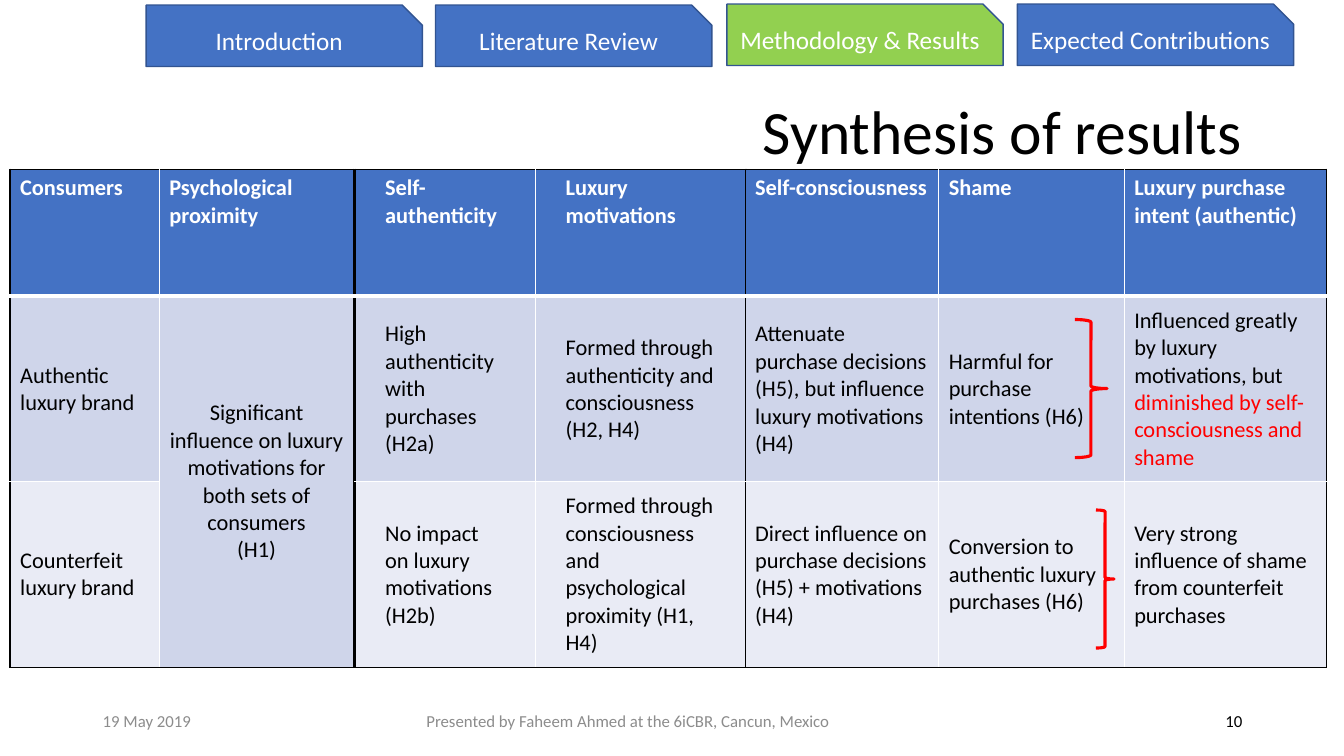
from lxml import etree
from pptx import Presentation
from pptx import util as u
from pptx.dml.color import RGBColor
from pptx.enum import shapes, text
from pptx.oxml.ns import qn

BLUE, BLACK, WHITE, RED = "4472C4", "000000", "FFFFFF", "FF0000"
ROW_FILLS = [BLUE, "CFD5EA", "E9EBF5"]
ROW_HEIGHTS = [1.26, 1.84, 1.84]
ALIGN = text.PP_ALIGN

STEPS = [
    ("Introduction", 1.45, 0.05, BLUE),
    ("Literature Review", 4.32, 0.05, BLUE),
    ("Methodology & Results", 7.21, 0.04, "92D050"),
    ("Expected Contributions", 10.09, 0.04, BLUE),
]

PROXIMITY = [
    ["Consumers", "Psychological proximity"],
    ["Authentic luxury brand",
     "Significant influence on luxury motivations for both sets of consumers\n(H1)"],
    ["Counterfeit luxury brand", ""],
]
MOTIVATION = [
    ["Self-authenticity", "Luxury motivations"],
    ["High authenticity with purchases (H2a)",
     "Formed through authenticity and consciousness (H2, H4)"],
    ["No impact on luxury motivations (H2b)",
     "Formed through consciousness and psychological proximity (H1, H4)"],
]
OUTCOME = [
    ["Self-consciousness", "Shame", "Luxury purchase intent (authentic)"],
    ["Attenuate purchase decisions (H5), but influence luxury motivations (H4)",
     "Harmful for\vpurchase intentions (H6)",
     ("Influenced greatly by luxury motivations, but ",
      "diminished by self-consciousness and shame")],
    ["Direct influence on purchase decisions (H5) + motivations (H4)",
     "Conversion to authentic luxury purchases (H6)",
     "Very strong influence of shame from counterfeit purchases"],
]


def rgb(value):
    return RGBColor.from_string(value)


def box(*lengths):
    return [u.Inches(length) for length in lengths]


def add_run(paragraph, words, size, color, bold=False):
    for index, line in enumerate(words.split("\v")):
        if index:
            paragraph.add_line_break()
        run = paragraph.add_run()
        run.text = line
        run.font.name = "Calibri"
        run.font.size = u.Pt(size)
        run.font.bold = bold
        run.font.color.rgb = rgb(color)


def write_line(frame, words, size, color, align):
    frame.word_wrap = True
    frame.vertical_anchor = text.MSO_ANCHOR.MIDDLE
    paragraph = frame.paragraphs[0]
    paragraph.alignment = align
    add_run(paragraph, words, size, color)
    return paragraph


def add_step(slide, label, left, top, fill):
    step = slide.shapes.add_shape(shapes.MSO_SHAPE.SNIP_1_RECTANGLE,
                                  *box(left, top, 2.74, 0.61))
    step.adjustments[0] = 0.329
    step.shadow.inherit = False
    step.fill.solid()
    step.fill.fore_color.rgb = rgb(fill)
    step.line.color.rgb = rgb("325491")
    step.line.width = u.Pt(1)
    write_line(step.text_frame, label, 18, WHITE, ALIGN.CENTER)


def add_title(slide, words):
    title = slide.shapes.title
    title.left, title.top, title.width, title.height = box(0.92, 0.8, 11.5, 1.06)
    paragraph = write_line(title.text_frame, words, 44, BLACK, ALIGN.RIGHT)
    paragraph.line_spacing = 0.9


def add_footer(slide, words, left, width, color, align):
    footer = slide.shapes.add_textbox(*box(left, 6.95, width, 0.4))
    write_line(footer.text_frame, words, 12, color, align)


def add_border(cell, side, color, width):
    line = etree.SubElement(cell._tc.get_or_add_tcPr(), qn("a:ln" + side),
                            w=str(u.Pt(width)))
    fill = etree.SubElement(line, qn("a:solidFill"))
    etree.SubElement(fill, qn("a:srgbClr"), val=color)


def style_cell(cell, row, is_first, is_last, inset):
    bottom_row = row + cell.span_height - 1
    add_border(cell, "L", BLACK if is_first else WHITE, 1)
    add_border(cell, "R", BLACK if is_last else WHITE, 1)
    add_border(cell, "T", WHITE if row else BLACK, 1 if row else 3 - 2)
    add_border(cell, "B", BLACK if bottom_row == 2 else WHITE, 1 if row else 3)
    cell.fill.solid()
    cell.fill.fore_color.rgb = rgb(ROW_FILLS[row])
    cell.margin_left = cell.margin_right = u.Inches(inset)
    if row:
        cell.vertical_anchor = text.MSO_ANCHOR.MIDDLE


def write_cell(cell, content, is_header):
    words, *warning = (content,) if isinstance(content, str) else content
    frame = cell.text_frame
    for index, line in enumerate(words.split("\n")):
        paragraph = frame.add_paragraph() if index else frame.paragraphs[0]
        paragraph.alignment = ALIGN.CENTER if cell.is_merge_origin else ALIGN.LEFT
        add_run(paragraph, line, 16, WHITE if is_header else BLACK, is_header)
    for words in warning:
        add_run(paragraph, words, 16, RED)


def add_results(slide, left, widths, content, inset=0.1, merged_column=None):
    frame = slide.shapes.add_table(len(content), len(widths),
                                   *box(left, 1.68, sum(widths), sum(ROW_HEIGHTS)))
    table = frame.table
    for column, width in zip(table.columns, widths):
        column.width = u.Inches(width)
    for row, height in zip(table.rows, ROW_HEIGHTS):
        row.height = u.Inches(height)
    if merged_column is not None:
        table.cell(1, merged_column).merge(table.cell(2, merged_column))
    for row, entries in enumerate(content):
        for column, entry in enumerate(entries):
            cell = table.cell(row, column)
            style_cell(cell, row, column == 0, column == len(widths) - 1, inset)
            if not cell.is_spanned:
                write_cell(cell, entry, row == 0)


def add_brace(slide, left, top, width):
    brace = slide.shapes.add_shape(shapes.MSO_SHAPE.RIGHT_BRACE,
                                   *box(left, top, width, 1.37))
    brace.shadow.inherit = False
    brace.fill.background()
    brace.line.color.rgb = rgb(RED)
    brace.line.width = u.Pt(2.25)


def main():
    deck = Presentation()
    deck.slide_width, deck.slide_height = box(13.33, 7.5)
    slide = deck.slides.add_slide(deck.slide_layouts[5])
    for step in STEPS:
        add_step(slide, *step)
    add_title(slide, "Synthesis of results")
    add_results(slide, 3.52, [1.79, 2.09], MOTIVATION, inset=0.3)
    add_footer(slide, "19 May 2019", 0.92, 2.06, "8C8C8C", ALIGN.LEFT)
    add_footer(slide, "Presented by Faheem Ahmed at the 6iCBR, Cancun, Mexico",
               3.18, 6.1, "8C8C8C", ALIGN.CENTER)
    add_footer(slide, "10", 9.42, 3, BLACK, ALIGN.RIGHT)
    add_results(slide, 0.1, [1.48, 1.93], PROXIMITY, merged_column=1)
    add_results(slide, 7.39, [1.92, 1.84, 2.01], OUTCOME)
    add_brace(slide, 10.66, 3.17, 0.32)
    add_brace(slide, 10.87, 5.06, 0.18)
    deck.save("out.pptx")


if __name__ == "__main__":
    main()
